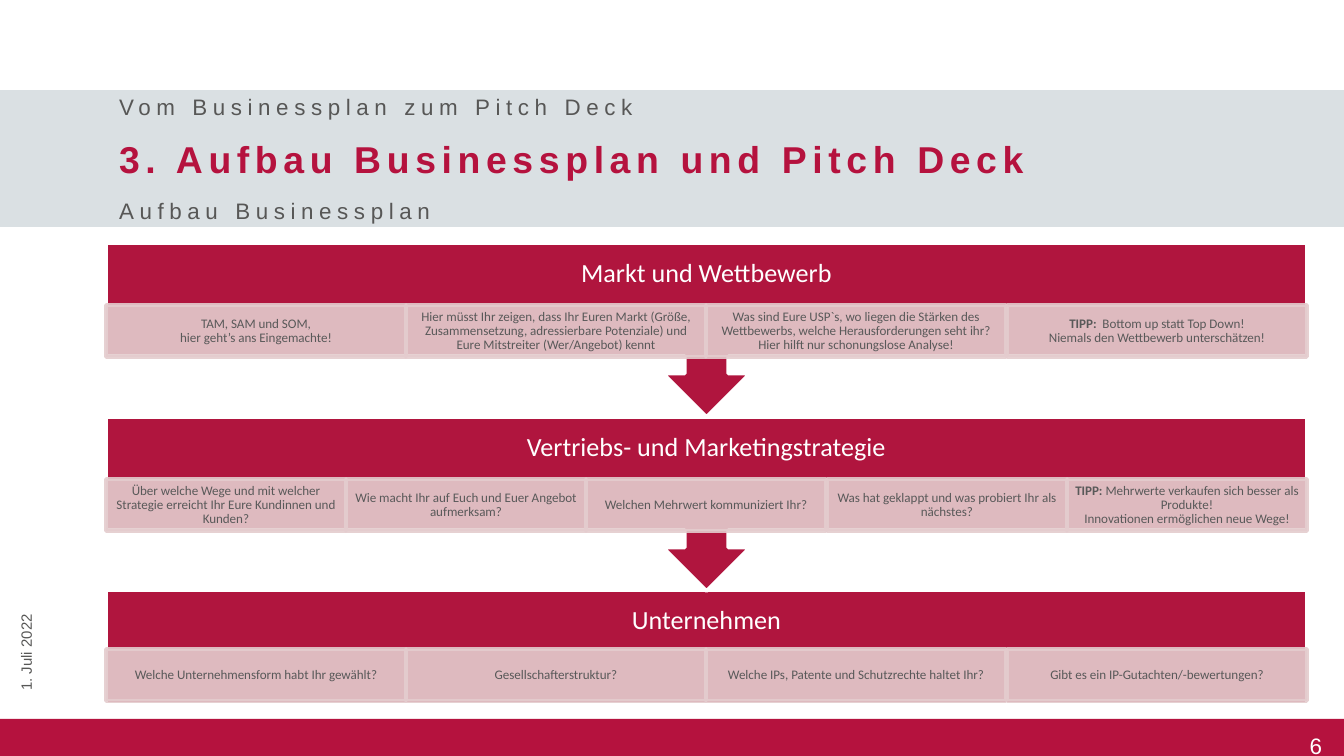
"""Build the slide on market, sales strategy and company in a business plan."""
from copy import deepcopy

from pptx import Presentation
from pptx.dml.color import RGBColor
from pptx.enum.shapes import MSO_SHAPE
from pptx.enum.text import MSO_ANCHOR, MSO_AUTO_SIZE, PP_ALIGN
from pptx.oxml.ns import qn
from pptx.util import Pt
from lxml import etree

RECT, CALLOUT = MSO_SHAPE.RECTANGLE, MSO_SHAPE.UP_ARROW_CALLOUT
TOP, MIDDLE = MSO_ANCHOR.TOP, MSO_ANCHOR.MIDDLE
NO_FIT = MSO_AUTO_SIZE.NONE
LEFT, CENTER, RIGHT = PP_ALIGN.LEFT, PP_ALIGN.CENTER, PP_ALIGN.RIGHT

WHITE = RGBColor(0xFF, 0xFF, 0xFF)
RED = RGBColor(0xB5, 0x12, 0x3E)
DARK = RGBColor(0xB0, 0x15, 0x3E)
BAND = RGBColor(0xDA, 0xE0, 0xE3)
ROSE = RGBColor(0xE4, 0xCC, 0xCE)
GRAY = RGBColor(0x57, 0x57, 0x56)
SLATE = RGBColor(0x59, 0x59, 0x59)

WIDE, HIGH = 1344, 756
SCALE = 9144000 / WIDE
EDGE, SPAN, CELL = 106, 1201, 52
TIP = "TIPP:"

ROWS = [
    (243, 174, 62, "Markt und Wettbewerb", [
        "TAM, SAM und SOM,\vhier geht’s ans Eingemachte!",
        "Hier müsst Ihr zeigen, dass Ihr Euren Markt (Größe, Zusammensetzung, "
        "adressierbare Potenziale) und Eure Mitstreiter (Wer/Angebot) kennt",
        "Was sind Eure USP`s, wo liegen die Stärken des Wettbewerbs, welche "
        "Herausforderungen seht ihr? Hier hilft nur schonungslose Analyse!",
        "TIPP:  Bottom up statt Top Down!\vNiemals den Wettbewerb unterschätzen!",
    ]),
    (417, 174, 62, "Vertriebs- und Marketingstrategie", [
        "Über welche Wege und mit welcher Strategie erreicht Ihr Eure Kundinnen und Kunden?",
        "Wie macht Ihr auf Euch und Euer Angebot aufmerksam?",
        "Welchen Mehrwert kommuniziert Ihr?",
        "Was hat geklappt und was probiert Ihr als nächstes?",
        "TIPP: Mehrwerte verkaufen sich besser als Produkte!\v"
        "Innovationen ermöglichen neue Wege!",
    ]),
    (590, 114, 59, "Unternehmen", [
        "Welche Unternehmensform habt Ihr gewählt?",
        "Gesellschafterstruktur?",
        "Welche IPs, Patente und Schutzrechte haltet Ihr?",
        "Gibt es ein IP-Gutachten/-bewertungen?",
    ]),
]


def px(*vals):
    """Turn px lengths into EMU."""
    return [round(v * SCALE) for v in vals]


class Deck:
    """Hold the style and the current slide."""

    head = {"name": "Arial", "size": Pt(20), "bold": True}
    sub = {"name": "Arial", "size": Pt(12)}
    date = {"name": "Arial", "size": Pt(8)}
    bar = {"name": "Calibri", "size": Pt(14)}
    note = {"name": "Calibri", "size": Pt(7)}
    tight = {"alignment": CENTER, "line_spacing": 0.9}

    def __init__(self):
        self.prs = Presentation()
        self.prs.slide_width, self.prs.slide_height = px(WIDE, HIGH)
        self.slide = self.prs.slides.add_slide(self.prs.slide_layouts[5])

    def put(self, shape, text, font, color, para=None, pad=(13, 7), anchor=MIDDLE, gap=0):
        """Fill a shape with one styled paragraph."""
        frame = shape.text_frame
        side, edge = px(*pad)
        form = {"word_wrap": True, "auto_size": NO_FIT, "vertical_anchor": anchor,
                "margin_left": side, "margin_right": side,
                "margin_top": edge, "margin_bottom": edge}
        for key, val in form.items():
            setattr(frame, key, val)
        line = frame.paragraphs[0]
        for key, val in (para or {"alignment": LEFT}).items():
            setattr(line, key, val)
        if text.startswith(TIP):
            line.add_run().text = TIP
            text = text[len(TIP):]
        for num, part in enumerate(text.split("\v")):
            if num:
                line.add_line_break()
            line.add_run().text = part
        for run in line.runs:
            for key, val in font.items():
                setattr(run.font, key, val)
            run.font.color.rgb = color
            if run.text == TIP:
                run.font.bold = True
            if gap:
                run._r.get_or_add_rPr().set("spc", str(gap))
        for stop in line._p.findall(qn("a:br")):
            stop.append(deepcopy(line.runs[-1]._r.get_or_add_rPr()))

    def title(self, box, text):
        """Place the title in front of the band."""
        shape = self.slide.shapes.title
        shape.left, shape.top, shape.width, shape.height = px(*box)
        self.slide.shapes._spTree.append(shape._element)
        self.put(shape, text, self.head, RED, gap=300)

    def label(self, box, text, font, color, turn=0, **form):
        """Add a text box."""
        shape = self.slide.shapes.add_textbox(*px(*box))
        shape.rotation = turn
        self.put(shape, text, font, color, **form)

    def block(self, box, fill, kind=RECT, line=None, alpha=None):
        """Add a filled shape."""
        shape = self.slide.shapes.add_shape(kind, *px(*box))
        shape.shadow.inherit = False
        shape.fill.solid()
        shape.fill.fore_color.rgb = fill
        if line is None:
            shape.line.fill.background()
        else:
            shape.line.color.rgb = line
            shape.line.width = Pt(2)
        if alpha:
            for tint in shape._element.spPr.iter(qn("a:srgbClr")):
                etree.SubElement(tint, qn("a:alpha")).set("val", str(alpha * 1000))
        return shape

    def row(self, top, tall, drop, name, notes):
        """Add a heading bar with its equal cells."""
        last = tall < 174
        shape = self.block((EDGE, top, SPAN, tall), DARK, RECT if last else CALLOUT, WHITE)
        shape.rotation = 0 if last else 180
        self.label((EDGE, top, SPAN, 62), name, self.bar, WHITE, para=self.tight, pad=(15, 15))
        wide = SPAN / len(notes)
        for num, text in enumerate(notes):
            box = (round(EDGE + num * wide), top + drop, round(wide), CELL)
            cell = self.block(box, ROSE, line=ROSE, alpha=90)
            self.put(cell, text, self.note, SLATE, self.tight, (7, 1))


def main():
    """Build and save the slide."""
    deck = Deck()
    deck.block((0, 719, WIDE, 37), RED)
    deck.label((1153, 707, 169, 52), "6", deck.sub, WHITE, pad=(0, 0),
               para={"alignment": RIGHT, "line_spacing": Pt(28)})
    deck.block((0, 90, WIDE, 137), BAND)
    for row in reversed(ROWS):
        deck.row(*row)
    deck.title((EDGE, 129, 1238, 59), "3. Aufbau Businessplan und Pitch Deck")
    deck.label((EDGE, 191, 1238, 40), "Aufbau Businessplan", deck.sub, GRAY, gap=300)
    deck.label((EDGE, 97, 1238, 20), "Vom Businessplan zum Pitch Deck", deck.sub, GRAY, gap=300)
    deck.label((-56, 606, 164, 32), "1. Juli 2022", deck.date, GRAY, turn=270, anchor=TOP)
    deck.prs.save("out.pptx")


if __name__ == "__main__":
    main()
